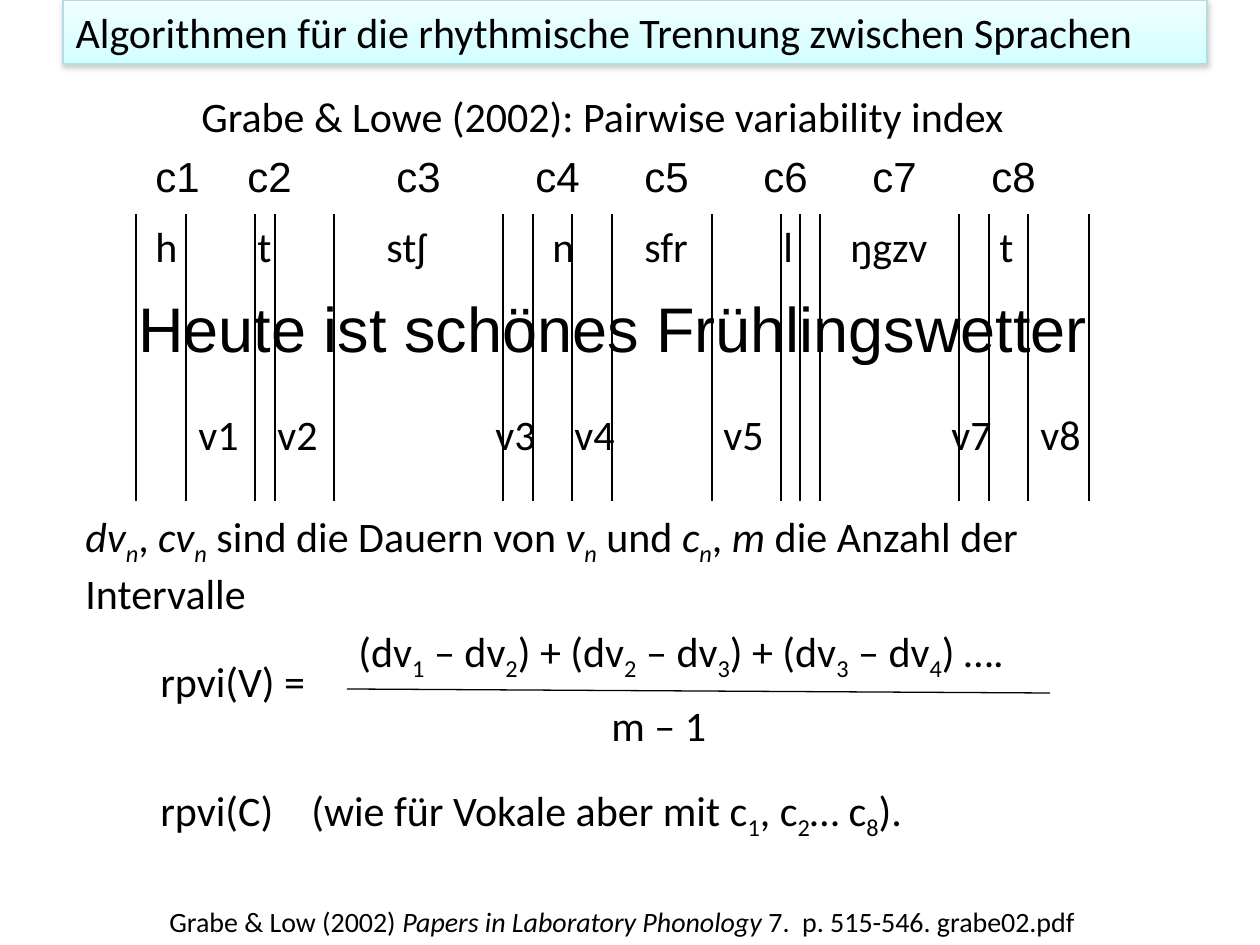
"""Build a slide on the pairwise variability index for speech rhythm."""
from copy import deepcopy

from pptx import Presentation
from pptx.dml.color import RGBColor
from pptx.enum.shapes import MSO_CONNECTOR
from pptx.enum.text import MSO_ANCHOR, MSO_AUTO_SIZE, PP_ALIGN
from pptx.oxml import parse_xml
from pptx.oxml.ns import nsdecls
from pptx.util import Emu, Pt

STRAIGHT = MSO_CONNECTOR.STRAIGHT
MIDDLE = MSO_ANCHOR.MIDDLE
LEFT = PP_ALIGN.LEFT
GROW = MSO_AUTO_SIZE.SHAPE_TO_FIT_TEXT
NO_FIT = MSO_AUTO_SIZE.NONE
EMU_PER_PX = 914400 / 126
BLACK = "000000"

TITLE = "Algorithmen für die rhythmische Trennung zwischen Sprachen"
TITLE_BOX = (63, 0, 1144, 64)
TITLE_GRADIENT = [(0, "F0FFFF"), (0.65, "DDFEFF"), (1, "CFFFFF")]
TITLE_BORDER = "B6DCDF"

WRAPPED_TEXTS = [
    ("Grabe & Lowe (2002): Pairwise variability index", (189, 84, 882, 64), 24),
    ("*dv_n_*, *cv_n_* sind die Dauern von *v_n_* und *c_n_*, *m* die Anzahl der Intervalle",
     (73, 504, 1052, 115), 24),
    ("Grabe & Low (2002) *Papers in Laboratory Phonology* 7.  p. 515-546. grabe02.pdf",
     (157, 898, 1018, 47), 16),
]
FORMULA_TEXTS = [
    ("(dv_1_ – dv_2_) + (dv_2_ – dv_3_) + (dv_3_ – dv_4_) ….", (346, 619, 688, 64)),
    ("m – 1", (599, 693, 121, 64)),
    ("rpvi(V) =", (148, 649, 171, 64)),
    ("rpvi(C)", (148, 778, 145, 64)),
    ("(wie für Vokale aber mit c_1_, c_2_… c_8_).", (299, 778, 631, 64)),
]
SENTENCE = ("Heute ist schönes Frühlingswetter", (126, 283, 974, 88))
FRACTION_BAR = (347, 689, 1050, 693)

BOUNDARIES = [136, 186, 255, 275, 334, 503, 533, 572, 612,
              712, 781, 800, 820, 959, 989, 1028, 1089]
BOUNDARY_TOP, BOUNDARY_BOTTOM = 214, 501

CONSONANTS = [("c1", 143, 72), ("c2", 235, 72), ("c3", 384, 72), ("c4", 523, 72),
              ("c5", 632, 72), ("c6", 751, 72), ("c7", 860, 72), ("c8", 979, 72)]
PHONES = [("h", 143, 49), ("t", 245, 39), ("stʃ", 374, 69), ("n", 540, 49),
          ("sfr", 632, 72), ("l", 771, 35), ("ŋgzv", 838, 103), ("t", 987, 39)]
VOWELS = [("v1", 186, 66), ("v2", 265, 66), ("v3", 483, 66), ("v4", 562, 66),
          ("v5", 711, 69), ("v7", 939, 69), ("v8", 1028, 69)]
LABEL_ROWS = [(CONSONANTS, 144, "Arial"), (PHONES, 214, "Calibri"), (VOWELS, 402, "Calibri")]
LABEL_HEIGHT = 64


def px(length):
    return Emu(round(length * EMU_PER_PX))


def color(hex_string):
    return RGBColor.from_string(hex_string)


def format_font(font, size, name):
    font.size = Pt(size)
    font.name = name
    font.color.rgb = color(BLACK)


def add_text(slide, markup, box, size=24, name="Calibri", wrap=False):
    frame = slide.shapes.add_textbox(*map(px, box)).text_frame
    frame.word_wrap = wrap
    frame.auto_size = GROW
    paragraph = frame.paragraphs[0]
    format_font(paragraph.font, size, name)
    for i, part in enumerate(markup.split("*")):
        for j, piece in enumerate(part.split("_")):
            if not piece:
                continue
            run = paragraph.add_run()
            run.text = piece
            if i % 2:
                run.font.italic = True
            if j % 2:
                run._r.get_or_add_rPr().set("baseline", "-25000")


def add_line(slide, *ends):
    line = slide.shapes.add_connector(STRAIGHT, *map(px, ends))
    line.line.color.rgb = color(BLACK)
    line.line.width = Pt(0.75)
    line._element.spPr.append(parse_xml(f"<a:effectLst {nsdecls('a')}/>"))


def fill_title(title):
    title.left, title.top, title.width, title.height = map(px, TITLE_BOX)
    title.fill.gradient()
    title.fill.gradient_angle = 270
    stop_list = title._element.xpath(".//a:gsLst")[0]
    stop_list.append(deepcopy(stop_list[0]))
    for stop, (position, shade) in zip(title.fill.gradient_stops, TITLE_GRADIENT):
        stop.position = position
        stop.color.rgb = color(shade)
    title.line.color.rgb = color(TITLE_BORDER)
    title.line.width = Pt(0.75)
    title._element.spPr.append(parse_xml(
        f'<a:effectLst {nsdecls("a")}><a:outerShdw blurRad="39370" dist="20320" '
        'dir="5400000" rotWithShape="0"><a:srgbClr val="808080">'
        '<a:alpha val="38000"/></a:srgbClr></a:outerShdw></a:effectLst>'))
    frame = title.text_frame
    frame.text = TITLE
    frame.word_wrap = True
    frame.auto_size = NO_FIT
    frame.vertical_anchor = MIDDLE
    paragraph = frame.paragraphs[0]
    paragraph.alignment = LEFT
    format_font(paragraph.font, 24, "Calibri")


def main():
    presentation = Presentation()
    presentation.slide_width, presentation.slide_height = px(1260), px(945)
    slide = presentation.slides.add_slide(presentation.slide_layouts[5])
    fill_title(slide.shapes.title)
    for markup, box, size in WRAPPED_TEXTS:
        add_text(slide, markup, box, size, wrap=True)
    for markup, box in FORMULA_TEXTS:
        add_text(slide, markup, box)
    add_line(slide, *FRACTION_BAR)
    add_text(slide, *SENTENCE, size=36, name="Arial")
    for x in BOUNDARIES:
        add_line(slide, x, BOUNDARY_TOP, x, BOUNDARY_BOTTOM)
    for labels, top, name in LABEL_ROWS:
        for label, left, width in labels:
            add_text(slide, label, (left, top, width, LABEL_HEIGHT), name=name)
    presentation.save("out.pptx")


if __name__ == "__main__":
    main()
